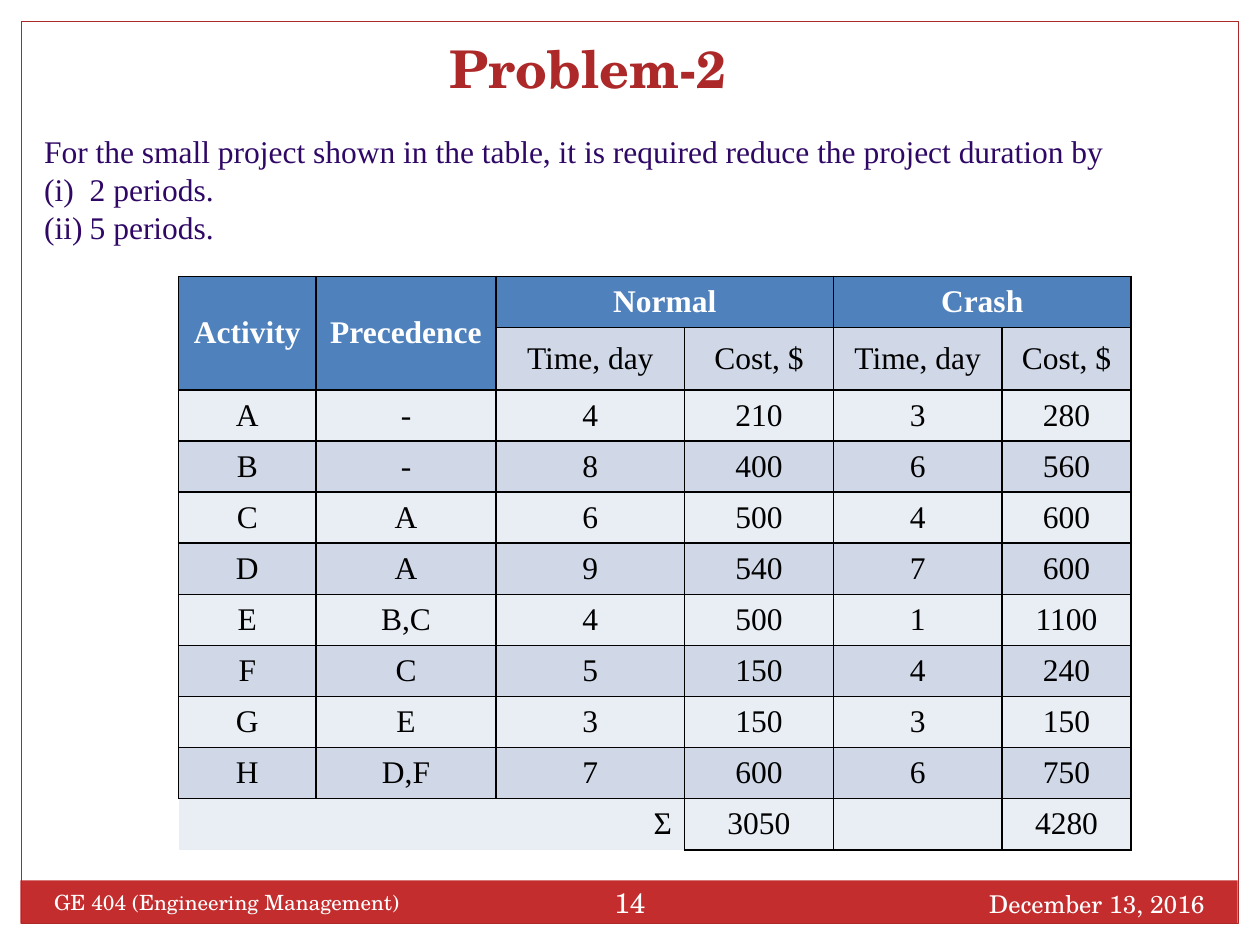
from lxml.etree import SubElement
from pptx import Presentation
from pptx.dml.color import RGBColor
from pptx.enum.shapes import MSO_SHAPE
from pptx.enum.text import MSO_ANCHOR, MSO_AUTO_SIZE, PP_ALIGN
from pptx.oxml.ns import qn
from pptx.util import Cm, Pt

HUES = {"red": "AC2829", "band": "C32D2E", "white": "FFFFFF", "ink": "2F0765",
        "head": "4F81BD", "dark": "D0D8E8", "light": "E9EDF4", "black": "000000"}
SERIF, ROMAN = "TeX Gyre Schola", "Times New Roman"
LEFT, MID, RIGHT = PP_ALIGN.LEFT, PP_ALIGN.CENTER, PP_ALIGN.RIGHT
WIDE, HIGH, EDGE = 25.4, 19.05, 0.43
COLS = [2.77, 3.63, 3.8, 3.0, 3.4, 2.6]
ROWS = [
    ["Activity", "Precedence", "Normal", "", "Crash", ""],
    ["", "", "Time, day", "Cost, $", "Time, day", "Cost, $"],
    ["A", "-", "4", "210", "3", "280"],
    ["B", "-", "8", "400", "6", "560"],
    ["C", "A", "6", "500", "4", "600"],
    ["D", "A", "9", "540", "7", "600"],
    ["E", "B,C", "4", "500", "1", "1100"],
    ["F", "C", "5", "150", "4", "240"],
    ["G", "E", "3", "150", "3", "150"],
    ["H", "D,F", "7", "600", "6", "750"],
    ["", "", "Σ", "3050", "", "4280"],
]
SPANS = [(0, 0, 1, 0), (0, 1, 1, 1), (0, 2, 0, 3), (0, 4, 0, 5)]


def color(name):
    """Return the named colour."""
    return RGBColor.from_string(HUES[name])


def style(para, size, face, hue, align=LEFT, bold=False):
    """Set the font and alignment of a paragraph."""
    font = para.font
    font.size, font.name, font.bold = Pt(size), face, bold
    font.color.rgb = color(hue)
    para.alignment = align


def add_title(slide, text):
    """Place and format the title."""
    title = slide.shapes.title
    title.left, title.top, title.width, title.height = Cm(0), Cm(0.65), Cm(23.71), Cm(1.47)
    frame = title.text_frame
    frame.text = text
    frame.auto_size = MSO_AUTO_SIZE.NONE
    frame.vertical_anchor = MSO_ANCHOR.BOTTOM
    style(frame.paragraphs[0], 29.7, SERIF, "red", MID, True)


def add_rect(slide, box, fill=None, line=None):
    """Add a plain rectangle with a fill or an outline."""
    rect = slide.shapes.add_shape(MSO_SHAPE.RECTANGLE, *map(Cm, box))
    rect.shadow.inherit = False
    if fill:
        rect.fill.solid()
        rect.fill.fore_color.rgb = color(fill)
    else:
        rect.fill.background()
    if line:
        rect.line.color.rgb = color(line)
        rect.line.width = Pt(0.75)
    else:
        rect.line.fill.background()


def add_frame(slide):
    """Add the white margins, the footer band and the outline."""
    inner = WIDE - 2 * EDGE
    for box in ((0, 0, WIDE, EDGE), (WIDE - EDGE, 0, EDGE, HIGH), (0, 0, EDGE, HIGH)):
        add_rect(slide, box, fill="white")
    add_rect(slide, (0.41, 17.75, inner, 0.87), fill="band")
    add_rect(slide, (EDGE, EDGE, inner, HIGH - 2 * EDGE), line="red")


def add_text(slide, box, lines, size, face, hue, align=LEFT):
    """Add a wrapped text box and return its frame."""
    frame = slide.shapes.add_textbox(*map(Cm, box)).text_frame
    frame.word_wrap = True
    frame.text = "\n".join(lines)
    for para in frame.paragraphs:
        style(para, size, face, hue, align)
    return frame


def hang(para, width):
    """Give a paragraph a hanging indent."""
    props = para._p.get_or_add_pPr()
    props.set("marL", str(Cm(width)))
    props.set("indent", str(-Cm(width)))


def add_edges(cell, sides):
    """Draw black borders on the given sides and clear the others."""
    props = cell._tc.get_or_add_tcPr()
    for side in "LRTB":
        edge = SubElement(props, qn(f"a:ln{side}"), w=str(Pt(1)))
        if side in sides:
            fill = SubElement(edge, qn("a:solidFill"))
            SubElement(fill, qn("a:srgbClr"), val=HUES["black"])
        else:
            SubElement(edge, qn("a:noFill"))


def fill_cell(cell, text, row, col):
    """Write and format one cell by its place in the table."""
    last = row == len(ROWS) - 1
    head = row == 0 or (row == 1 and col < 2)
    open_sides = "TR" if col == 2 else "T"
    add_edges(cell, open_sides if last and col < 3 else "LRTB")
    cell.fill.solid()
    cell.fill.fore_color.rgb = color("head" if head else "dark" if row % 2 else "light")
    cell.vertical_anchor = MSO_ANCHOR.MIDDLE
    cell.text = text
    align = RIGHT if last and col == 2 else MID
    style(cell.text_frame.paragraphs[0], 18, ROMAN, "white" if head else "black", align, head)


def add_grid(slide):
    """Add the table of activities."""
    box = map(Cm, (3.6, 5.57, sum(COLS), 11.56))
    table = slide.shapes.add_table(len(ROWS), len(COLS), *box).table
    table.first_row = table.horz_banding = False
    for col, width in zip(table.columns, COLS):
        col.width = Cm(width)
    for num, row in enumerate(table.rows):
        row.height = Cm(1.26 if num == 1 else 1.03)
    for row, texts in enumerate(ROWS):
        for col, text in enumerate(texts):
            fill_cell(table.cell(row, col), text, row, col)
    for top, left, low, right in SPANS:
        table.cell(top, left).merge(table.cell(low, right))


def add_footer(slide):
    """Add the date, course and page number."""
    add_text(slide, (16.08, 17.79, 8.46, 1.02), ["December 13, 2016"], 14, SERIF, "white", RIGHT)
    add_text(slide, (0.84, 17.8, 9.96, 1.02), ["GE 404 (Engineering Management)"],
             12, SERIF, "white")
    page = add_text(slide, (11.85, 17.58, 1.7, 1.22), ["14"], 16, SERIF, "white", MID)
    page.margin_left = page.margin_right = Cm(0.13)
    page.vertical_anchor = MSO_ANCHOR.MIDDLE


def main():
    """Build the slide and save it."""
    deck = Presentation()
    deck.slide_width, deck.slide_height = Cm(WIDE), Cm(HIGH)
    slide = deck.slides.add_slide(deck.slide_layouts[5])
    add_frame(slide)
    add_footer(slide)
    add_title(slide, "Problem-2")
    task = add_text(slide, (0.64, 2.54, 23.5, 2.57), [
        "For the small project shown in the table, it is required reduce the project duration by",
        "(i)\t2 periods.", "(ii)\t5 periods."], 18, ROMAN, "ink")
    for para in task.paragraphs[1:]:
        hang(para, 0.92)
    add_grid(slide)
    deck.save("out.pptx")


if __name__ == "__main__":
    main()
